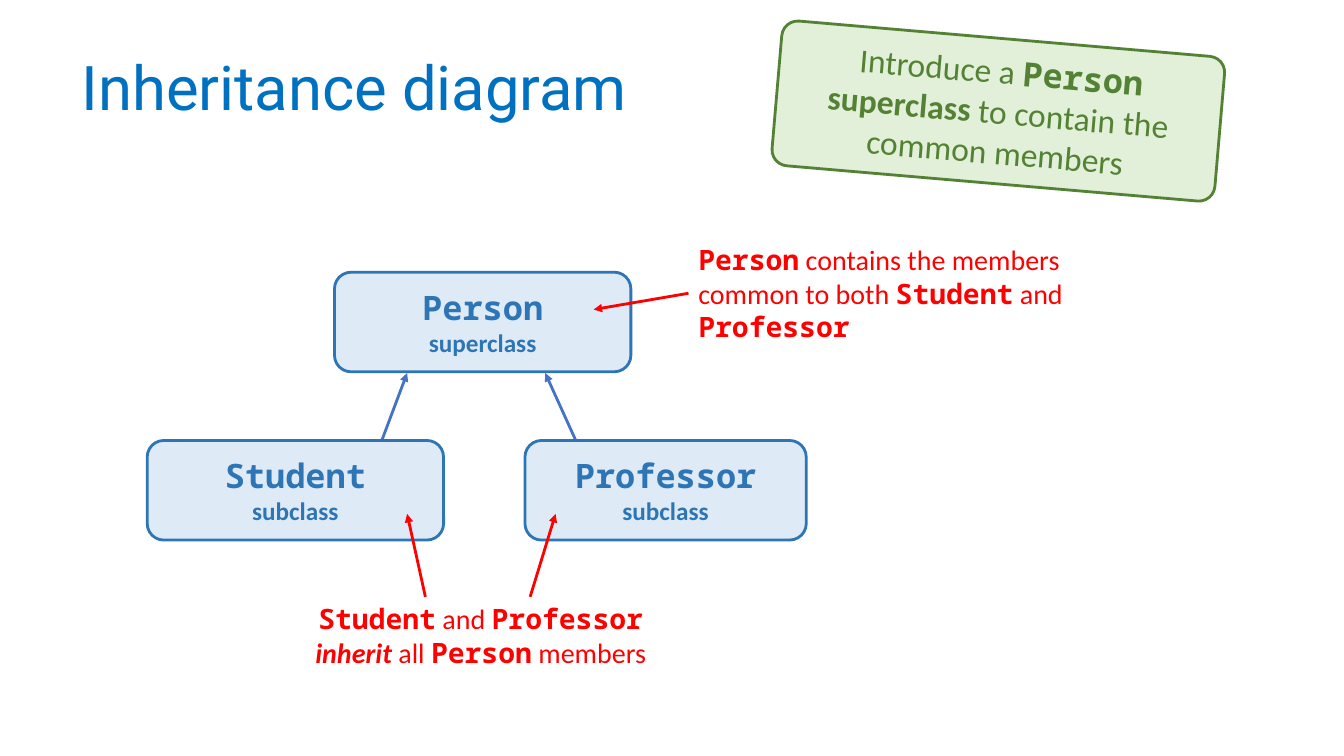
from lxml import etree
from pptx import Presentation
from pptx.dml.color import RGBColor
from pptx.enum.shapes import MSO_CONNECTOR, MSO_SHAPE
from pptx.enum.text import MSO_ANCHOR, MSO_AUTO_SIZE, PP_ALIGN
from pptx.oxml.ns import qn
from pptx.util import Cm, Pt

LEFT, CENTER = PP_ALIGN.LEFT, PP_ALIGN.CENTER
TOP, MIDDLE = MSO_ANCHOR.TOP, MSO_ANCHOR.MIDDLE
STRAIGHT, ROUNDED = MSO_CONNECTOR.STRAIGHT, MSO_SHAPE.ROUNDED_RECTANGLE
NO_AUTOFIT = MSO_AUTO_SIZE.NONE

TITLE_BLUE = RGBColor(0x00, 0x70, 0xC0)
ARROW_BLUE = RGBColor(0x44, 0x72, 0xC4)
BOX_BLUE = RGBColor(0x2E, 0x75, 0xB6)
BOX_FILL = RGBColor(0xDE, 0xEB, 0xF7)
RED = RGBColor(0xFF, 0x00, 0x00)
GREEN = RGBColor(0x54, 0x82, 0x35)
GREEN_FILL = RGBColor(0xE2, 0xF0, 0xD9)

PLAIN = {"name": "Calibri", "bold": False}
BOLD = {"name": "Calibri", "bold": True}
EMPHASIS = {"name": "Calibri", "bold": True, "italic": True}
CODE = {"name": "Noto Sans Mono", "bold": True}
HEADING = {"name": "Roboto", "bold": False}


class Diagram:
    """Holds the line style and the current slide, and draws its elements."""

    def __init__(self, s, line_width=Pt(2)):
        self.s = s
        self.line_width = line_width

    def add_text(self, tf, paragraphs, color, align=CENTER, anchor=MIDDLE):
        """Fill a text frame with paragraphs of (text, size, format) runs."""
        tf.word_wrap = True
        tf.auto_size = NO_AUTOFIT
        tf.vertical_anchor = anchor
        for i, runs in enumerate(paragraphs):
            p = tf.add_paragraph() if i else tf.paragraphs[0]
            p.alignment = align
            for text, size, style in runs:
                r = p.add_run()
                r.text = text
                r.font.size = Pt(size)
                r.font.color.rgb = color
                for key, value in style.items():
                    setattr(r.font, key, value)

    def title(self, text, box):
        """Place and format the title placeholder."""
        sp = self.s.shapes.title
        sp.left, sp.top, sp.width, sp.height = map(Cm, box)
        self.add_text(sp.text_frame, [[(text, 44, HEADING)]], TITLE_BLUE, LEFT)
        sp.text_frame.paragraphs[0].line_spacing = 0.9

    def box(self, box, paragraphs, color, fill):
        """Draw a rounded box with centred text."""
        sp = self.s.shapes.add_shape(ROUNDED, *map(Cm, box))
        sp.shadow.inherit = False
        sp.fill.solid()
        sp.fill.fore_color.rgb = fill
        sp.line.color.rgb = color
        sp.line.width = self.line_width
        self.add_text(sp.text_frame, paragraphs, color)
        return sp

    def note(self, box, runs, align):
        """Add a red annotation."""
        sp = self.s.shapes.add_textbox(*map(Cm, box))
        runs = [(text, 20, style) for text, style in runs]
        self.add_text(sp.text_frame, [runs], RED, align, TOP)

    def arrow(self, start, end, color):
        """Draw an arrow pointing at its end."""
        cn = self.s.shapes.add_connector(STRAIGHT, *map(Cm, start + end))
        cn.line.color.rgb = color
        cn.line.width = self.line_width
        sp_pr = cn._element.spPr
        etree.SubElement(sp_pr.find(qn("a:ln")), qn("a:tailEnd"), type="triangle")
        etree.SubElement(sp_pr, qn("a:effectLst"))


def main():
    """Build the slide and save it."""
    prs = Presentation()
    prs.slide_width, prs.slide_height = Cm(33.87), Cm(19.05)
    d = Diagram(prs.slides.add_slide(prs.slide_layouts[5]))
    d.title("Inheritance diagram", (1.8, 1.02, 29.74, 2.54))

    for start, end in (((9.25, 12.09), (10.26, 9.4)), ((14.96, 12.09), (13.74, 9.4))):
        d.arrow(start, end, ARROW_BLUE)

    for name, role, left, top, width in (
        ("Student", "subclass", 3.71, 11.1, 7.47),
        ("Professor", "subclass", 13.23, 11.1, 7.09),
        ("Person", "superclass", 8.43, 6.86, 7.47),
    ):
        paragraphs = [[(name, 24, CODE)], [(role, 18, BOLD)]]
        d.box((left, top, width, 2.51), paragraphs, BOX_BLUE, BOX_FILL)

    for start, end in (
        ((17.35, 7.39), (14.96, 7.8)),
        ((13.36, 15.04), (14, 12.95)),
        ((10.72, 15.04), (10.26, 12.95)),
    ):
        d.arrow(start, end, RED)

    d.note((17.35, 5.99, 11.48, 2.82), [
        ("Person", CODE), (" contains the members common to both ", PLAIN),
        ("Student", CODE), (" and ", PLAIN), ("Professor", CODE),
    ], LEFT)
    d.note((7.49, 15.04, 9.25, 1.96), [
        ("Student", CODE), (" and ", PLAIN), ("Professor ", CODE),
        ("inherit", EMPHASIS), (" all ", PLAIN), ("Person", CODE),
        (" members", PLAIN),
    ], CENTER)

    callout = d.box((19.56, 0.97, 11.2, 3.66), [[
        ("Introduce a ", 24, PLAIN), ("Person ", 24, CODE),
        ("superclass ", 24, BOLD), ("to contain the common members", 24, PLAIN),
    ]], GREEN, GREEN_FILL)
    callout.adjustments[0] = 0.11
    callout.rotation = 4.9
    prs.save("out.pptx")


if __name__ == "__main__":
    main()
